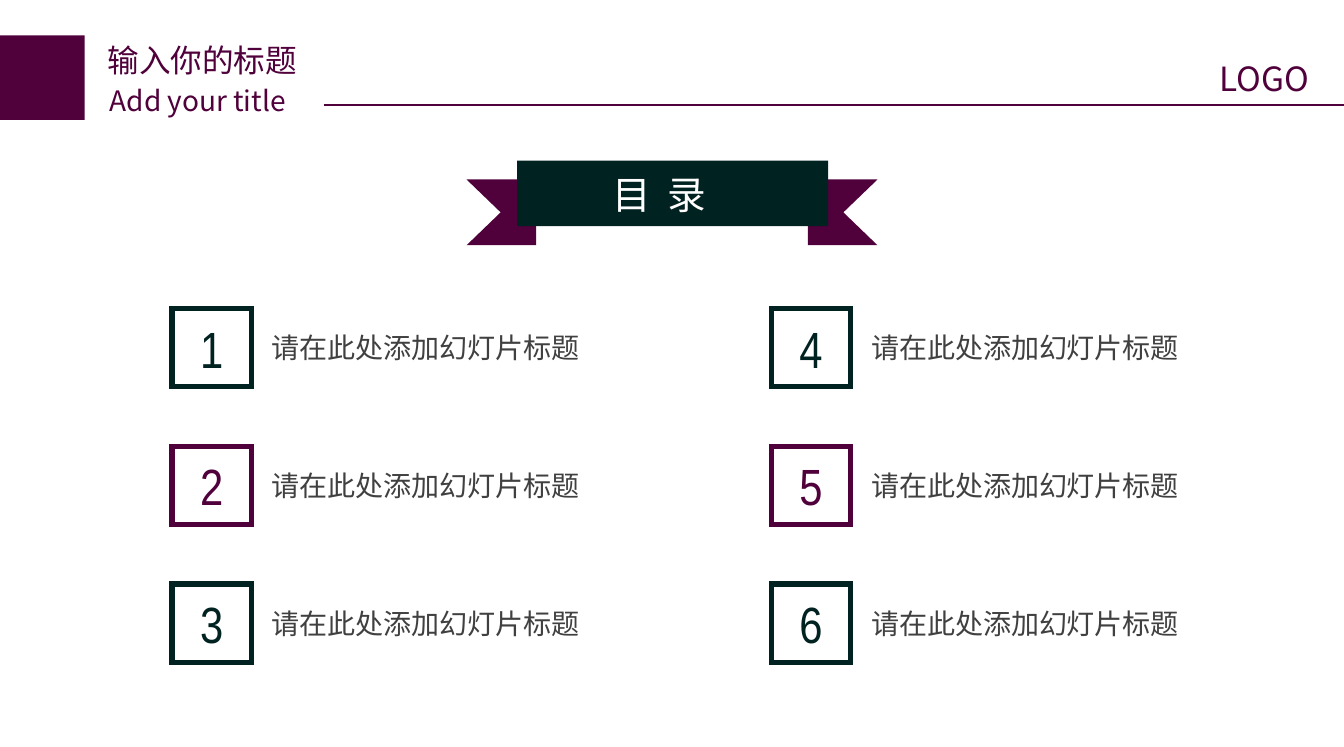
from pptx import Presentation
from pptx.dml.color import RGBColor
from pptx.enum.shapes import MSO_CONNECTOR, MSO_SHAPE
from pptx.enum.text import MSO_ANCHOR, PP_ALIGN
from pptx.oxml.ns import qn
from pptx.util import Inches, Pt
from lxml.etree import SubElement

# Content
TITLE = "输入你的标题"
SUBTITLE = "Add your title"
LOGO_TEXT = "LOGO"
BANNER = "目 录"
ENTRIES = ["请在此处添加幻灯片标题"] * 6

# Style
PLUM = RGBColor(0x50, 0x00, 0x3B)
DARK = RGBColor(0x00, 0x22, 0x21)
GREY = RGBColor(0x40, 0x40, 0x40)
WHITE = RGBColor(0xFF, 0xFF, 0xFF)
SANS = "Noto Sans CJK SC"

# Grid, in inches
WIDTH, HEIGHT = 10.63, 5.91
ROWS = 3
LEFT, TOP = 1.36, 2.44
COLUMN_STEP, ROW_STEP = 4.74, 1.09
SQUARE_W, SQUARE_H = 0.63, 0.62
LABEL_W, LABEL_H = 2.67, 0.35

deck = Presentation()
deck.slide_width, deck.slide_height = Inches(WIDTH), Inches(HEIGHT)
page = deck.slides.add_slide(deck.slide_layouts[5])


def write(box, text, size, color, font=SANS, align=PP_ALIGN.LEFT,
          anchor=MSO_ANCHOR.TOP, insets=(0.1, 0.05, 0.1), wrap=False, spacing=0):
    """Put one formatted line into a shape; insets are left, vertical, right."""
    frame = box.text_frame
    frame.word_wrap = wrap
    frame.vertical_anchor = anchor
    left, vertical, right = map(Inches, insets)
    frame.margin_left, frame.margin_right = left, right
    frame.margin_top = frame.margin_bottom = vertical
    para = frame.paragraphs[0]
    para.alignment = align
    span = para.add_run()
    span.text = text
    span.font.size = Pt(size)
    span.font.color.rgb = color
    span.font.name = font
    properties = span._r.get_or_add_rPr()
    SubElement(properties, qn("a:ea")).set("typeface", SANS)
    if spacing:
        properties.set("spc", str(int(spacing * 100)))


def add_text(left, top, width, height, text, size, color, **style):
    box = page.shapes.add_textbox(*map(Inches, (left, top, width, height)))
    write(box, text, size, color, **style)


def paint(shape, fill=None, line=None):
    shape.shadow.inherit = False
    if fill is None:
        shape.fill.background()
    else:
        shape.fill.solid()
        shape.fill.fore_color.rgb = fill
    if line is None:
        shape.line.fill.background()
    else:
        shape.line.color.rgb = line
        shape.line.width = Pt(3)
        outline = shape._element.spPr.find(qn("a:ln"))
        SubElement(outline, qn("a:miter")).set("lim", "800000")


def add_rectangle(left, top, width, height, fill=None, line=None):
    shape = page.shapes.add_shape(
        MSO_SHAPE.RECTANGLE, *map(Inches, (left, top, width, height)))
    paint(shape, fill, line)
    return shape


# Header
add_rectangle(0, 0.28, 0.67, 0.67, fill=PLUM)
title = page.shapes.title
title.left, title.top, title.width, title.height = map(
    Inches, (0.75, 0.27, 1.73, 0.4))
write(title, TITLE, 18, PLUM, wrap=True)
add_text(0.77, 0.61, 1.73, 0.37, SUBTITLE, 16, PLUM, wrap=True)
rule = page.shapes.add_connector(
    MSO_CONNECTOR.STRAIGHT, Inches(2.56), Inches(0.83), Inches(WIDTH), Inches(0.83))
rule.line.color.rgb = PLUM
rule.line.width = Pt(0.75)
SubElement(rule._element.spPr, qn("a:effectLst"))
add_text(9.55, 0.41, 0.96, 0.42, LOGO_TEXT, 19, PLUM)

# Ribbon: two mirrored tails behind the banner
TAIL_TOP, TAIL_H = 1.42, 0.52
for outer, direction in ((3.69, 1), (6.94, -1)):
    inner, notch = outer + direction * 0.55, outer + direction * 0.27
    bottom = TAIL_TOP + TAIL_H
    points = [(inner, TAIL_TOP), (inner, bottom), (outer, bottom),
              (notch, TAIL_TOP + TAIL_H / 2)]
    builder = page.shapes.build_freeform(
        Inches(outer), Inches(TAIL_TOP), scale=1.0)
    builder.add_line_segments([(Inches(x), Inches(y)) for x, y in points])
    paint(builder.convert_to_shape(), fill=PLUM)
add_rectangle(4.09, 1.27, 2.46, 0.52, fill=DARK)
add_text(4.76, 1.31, 0.91, 0.45, BANNER, 22, WHITE, font="Calibri",
         align=PP_ALIGN.CENTER, insets=(0.08, 0.04, 0.08), spacing=2.5)

# Contents: numbered squares down each column, colours alternating by row
for index, entry in enumerate(ENTRIES):
    column, row = divmod(index, ROWS)
    left, top = LEFT + column * COLUMN_STEP, TOP + row * ROW_STEP
    color = PLUM if row % 2 else DARK
    square = add_rectangle(left, top, SQUARE_W, SQUARE_H, line=color)
    write(square, str(index + 1), 29, color, font="Arial Narrow",
          align=PP_ALIGN.CENTER, anchor=MSO_ANCHOR.MIDDLE, insets=(0, 0, 0))
    add_text(left + SQUARE_W + 0.03, top + (SQUARE_H - LABEL_H) / 2,
             LABEL_W, LABEL_H, entry, 16, GREY, insets=(0.13, 0.04, 0))

deck.save("out.pptx")
